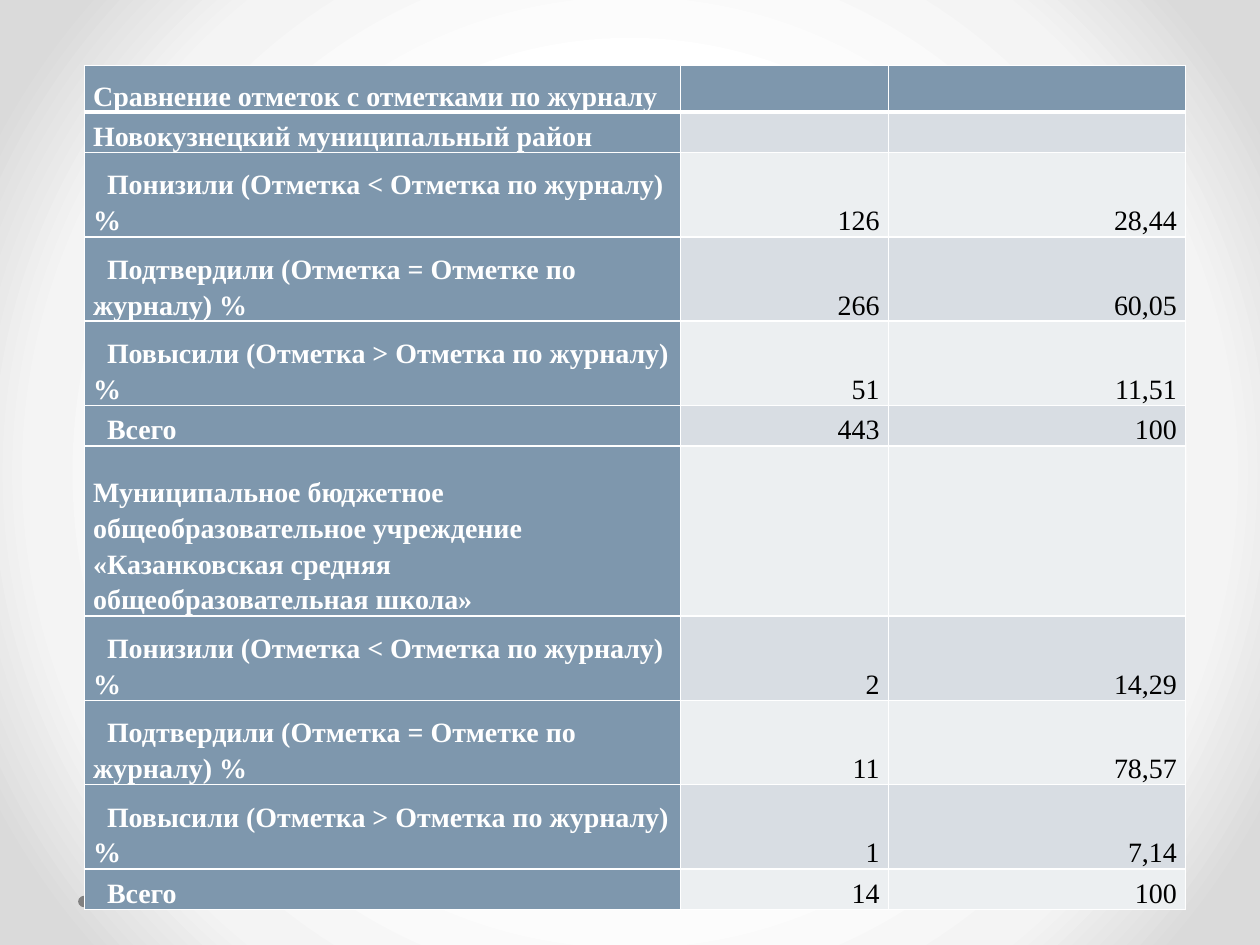
from pptx import Presentation
from pptx.dml.color import RGBColor
from pptx.enum.shapes import MSO_SHAPE
from pptx.enum.text import MSO_ANCHOR, PP_ALIGN
from pptx.oxml import parse_xml
from pptx.oxml.ns import nsdecls
from pptx.util import Inches, Pt

HEADING, DARK_BAND, LIGHT_BAND = "7E97AD", "D8DDE3", "ECEFF1"
LOWERED = "Понизили (Отметка < Отметка по журналу) %"
CONFIRMED = "Подтвердили (Отметка = Отметке по журналу) %"
RAISED = "Повысили (Отметка > Отметка по журналу) %"
TOTAL = "Всего"
ROWS = [
    (0.37, "Сравнение отметок с отметками по журналу", "", ""),
    (0.32, "Новокузнецкий муниципальный район", "", ""),
    (0.67, LOWERED, "126", "28,44"),
    (0.67, CONFIRMED, "266", "60,05"),
    (0.67, RAISED, "51", "11,51"),
    (0.32, TOTAL, "443", "100"),
    (1.35, "Муниципальное бюджетное общеобразовательное учреждение "
           "«Казанковская средняя общеобразовательная школа»", "", ""),
    (0.67, LOWERED, "2", "14,29"),
    (0.67, CONFIRMED, "11", "78,57"),
    (0.67, RAISED, "1", "7,14"),
    (0.32, TOTAL, "14", "100"),
]
COLUMN_WIDTHS = [4.73, 1.65, 2.36]


def set_fill(target, color):
    target.fill.solid()
    target.fill.fore_color.rgb = RGBColor.from_string(color)


def add_border(cell, side, points):
    cell._tc.get_or_add_tcPr().append(parse_xml(
        f'<a:ln{side} {nsdecls("a")} w="{Pt(points)}"><a:solidFill>'
        f'<a:srgbClr val="FFFFFF"/></a:solidFill></a:ln{side}>'))


presentation = Presentation()
presentation.slide_width = Inches(10)
presentation.slide_height = Inches(7.5)
slide = presentation.slides.add_slide(presentation.slide_layouts[6])

# Radial background, white in the middle
stops = "".join(
    f'<a:gs pos="{position * 1000}"><a:srgbClr val="{color}"/></a:gs>'
    for position, color in [(50, "FFFFFF"), (76, "F4F4F4"), (92, "DADADA")])
slide._element.cSld.insert(0, parse_xml(
    f'<p:bg {nsdecls("p", "a")}><p:bgPr><a:gradFill rotWithShape="1">'
    f'<a:gsLst>{stops}</a:gsLst><a:path path="circle">'
    '<a:fillToRect l="50000" t="50000" r="50000" b="50000"/></a:path>'
    '</a:gradFill><a:effectLst/></p:bgPr></p:bg>'))

# Footer dots, partly behind the table
for left in (9.25, 0.62):
    dot = slide.shapes.add_shape(
        MSO_SHAPE.OVAL, Inches(left), Inches(7.11), Inches(0.09), Inches(0.09))
    dot.shadow.inherit = False
    dot.line.fill.background()
    set_fill(dot, "808080")

table = slide.shapes.add_table(
    len(ROWS), len(COLUMN_WIDTHS), Inches(0.67), Inches(0.52),
    Inches(sum(COLUMN_WIDTHS)), Inches(sum(row[0] for row in ROWS))).table
for column, width in zip(table.columns, COLUMN_WIDTHS):
    column.width = Inches(width)

for row_index, (height, *texts) in enumerate(ROWS):
    table.rows[row_index].height = Inches(height)
    band = DARK_BAND if row_index % 2 else LIGHT_BAND
    for column_index, text in enumerate(texts):
        is_label = column_index == 0
        cell = table.cell(row_index, column_index)
        cell.margin_left = cell.margin_right = Inches(0.07)
        cell.margin_top = cell.margin_bottom = 0
        cell.vertical_anchor = MSO_ANCHOR.BOTTOM
        add_border(cell, "L", 1)
        add_border(cell, "R", 1)
        add_border(cell, "T", 3 if row_index == 1 else 1)
        add_border(cell, "B", 3 if row_index == 0 else 1)
        set_fill(cell, HEADING if is_label or row_index == 0 else band)

        paragraph = cell.text_frame.paragraphs[0]
        paragraph.line_spacing = 1.15
        paragraph.alignment = PP_ALIGN.LEFT if is_label else PP_ALIGN.RIGHT
        if not text:
            # Keeps an empty cell from stretching its row
            paragraph._p.append(parse_xml(
                f'<a:endParaRPr {nsdecls("a")} sz="1600"/>'))
            continue
        paragraph.text = text
        if is_label and texts[1]:
            paragraph._p.get_or_add_pPr().set("indent", str(Inches(0.11)))
        font = paragraph.runs[0].font
        font.name = "Times New Roman"
        font.size = Pt(16)
        font.bold = is_label
        font.color.rgb = RGBColor.from_string("FFFFFF" if is_label else "000000")

presentation.save("out.pptx")
